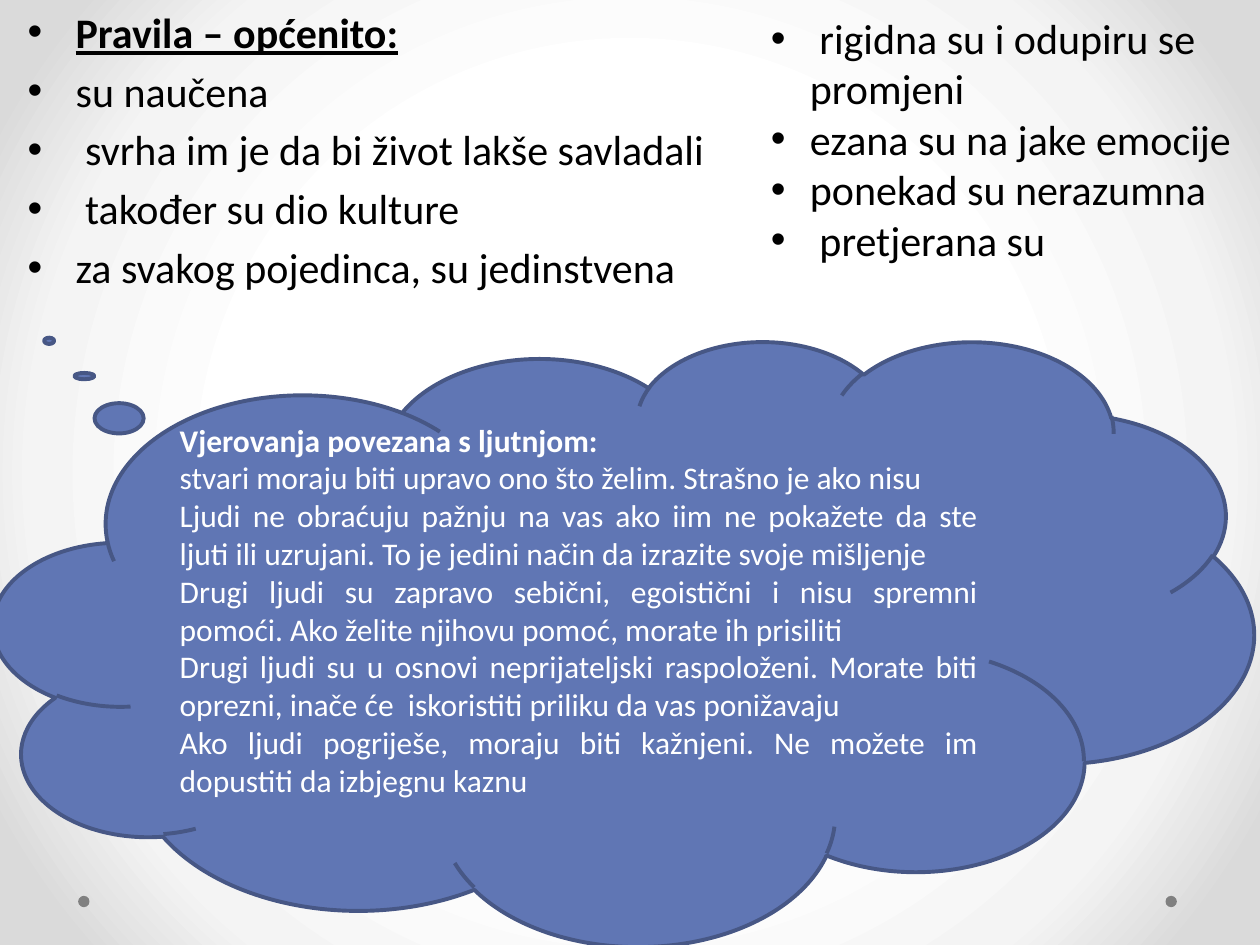
from lxml import etree
from pptx import Presentation
from pptx.dml import color as c
from pptx.enum import shapes, text
from pptx.oxml import ns
from pptx.util import Inches, Pt

THEME = {
    "font": "Calibri",
    "list_size": 24,
    "cloud_size": 18,
    "dark": "000000",
    "light": "FFFFFF",
    "cloud": "6076B4",
    "outline": "475785",
    "dot": "808080",
    "background": [(0, "FFFFFF"), (50, "FFFFFF"), (76, "F4F4F4"), (92, "DADADA"), (100, "DADADA")],
}


def add_shape(kind, box, fill, line=None):
    sp = s.shapes.add_shape(kind, *map(Inches, box))
    sp.shadow.inherit = False
    sp.fill.solid()
    sp.fill.fore_color.rgb = c.RGBColor.from_string(fill)
    if line:
        sp.line.color.rgb = c.RGBColor.from_string(line)
        sp.line.width = Pt(2.25)
    else:
        sp.line.fill.background()
    return sp


def write_lines(tf, lines, size, color, align, indent=0, heading=None, space=None):
    for i, line in enumerate(lines):
        p = tf.paragraphs[0] if i == 0 else tf.add_paragraph()
        p.alignment = align
        if space is not None:
            p.space_before = Pt(space)
        if indent:
            pPr = p._p.get_or_add_pPr()
            pPr.set("marL", str(Inches(indent)))
            pPr.set("indent", str(-Inches(indent)))
            etree.SubElement(pPr, ns.qn("a:buFont")).set("typeface", "Arial")
            etree.SubElement(pPr, ns.qn("a:buChar")).set("char", "•")
        r = p.add_run()
        r.text = line
        formats = {"name": THEME["font"], "size": Pt(size), "bold": False}
        if i == 0 and heading:
            formats.update(heading)
        for name, value in formats.items():
            setattr(r.font, name, value)
        r.font.color.rgb = c.RGBColor.from_string(color)


prs = Presentation()
prs.slide_width, prs.slide_height = Inches(10), Inches(7.5)
s = prs.slides.add_slide(prs.slide_layouts[1])
title = s.shapes.title._element
title.getparent().remove(title)

cSld = s._element.find(ns.qn("p:cSld"))
bg = etree.Element(ns.qn("p:bg"))
cSld.insert(0, bg)
bgPr = etree.SubElement(bg, ns.qn("p:bgPr"))
grad = etree.SubElement(bgPr, ns.qn("a:gradFill"), rotWithShape="1")
stops = etree.SubElement(grad, ns.qn("a:gsLst"))
for pos, rgb in THEME["background"]:
    stop = etree.SubElement(stops, ns.qn("a:gs"), pos=str(pos * 1000))
    etree.SubElement(stop, ns.qn("a:srgbClr"), val=rgb)
circle = etree.SubElement(grad, ns.qn("a:path"))
circle.set("path", "circle")
etree.SubElement(circle, ns.qn("a:fillToRect"), l="50000", t="50000", r="50000", b="50000")
etree.SubElement(bgPr, ns.qn("a:effectLst"))

for left in (9.25, 0.62):
    add_shape(shapes.MSO_SHAPE.OVAL, (left, 7.11, 0.09, 0.09), THEME["dot"])

rules = s.placeholders[1]
box = {"left": 0.12, "top": 0, "width": 5.76, "height": 2.81}
for name, value in box.items():
    setattr(rules, name, Inches(value))
rules.text_frame.auto_size = text.MSO_AUTO_SIZE.NONE
write_lines(rules.text_frame, [
    "Pravila – općenito:",
    "su naučena",
    " svrha im je da bi život lakše savladali",
    " također su dio kulture",
    "za svakog pojedinca, su jedinstvena",
], THEME["list_size"], THEME["dark"], text.PP_ALIGN.LEFT, 0.38, {"bold": True, "underline": True})

cloud = add_shape(shapes.MSO_SHAPE.CLOUD, (-0.05, 2.7, 10, 4.8), THEME["cloud"], THEME["outline"])
tf = cloud.text_frame
tf.word_wrap = True
tf.vertical_anchor = text.MSO_ANCHOR.MIDDLE
tf.margin_bottom = Inches(0.35)
write_lines(tf, [
    "Vjerovanja povezana s ljutnjom:",
    "stvari moraju biti upravo ono što želim. Strašno je ako nisu",
    "Ljudi ne obraćuju pažnju na vas ako iim ne pokažete da ste ljuti ili uzrujani. To je jedini način da izrazite svoje mišljenje",
    "Drugi ljudi su zapravo sebični, egoistični i nisu spremni pomoći. Ako želite njihovu pomoć, morate ih prisiliti",
    "Drugi ljudi su u osnovi neprijateljski raspoloženi. Morate biti oprezni, inače će  iskoristiti priliku da vas ponižavaju",
    "Ako ljudi pogriješe, moraju biti kažnjeni. Ne možete im dopustiti da izbjegnu kaznu",
], THEME["cloud_size"], THEME["light"], text.PP_ALIGN.JUSTIFY, heading={"bold": True})

traits = s.shapes.add_textbox(*map(Inches, (6.02, 0.05, 3.98, 2.12)))
tf = traits.text_frame
tf.word_wrap = True
tf.auto_size = text.MSO_AUTO_SIZE.SHAPE_TO_FIT_TEXT
write_lines(tf, [
    " rigidna su i odupiru se promjeni",
    "ezana su na jake emocije",
    "ponekad su nerazumna",
    " pretjerana su",
], THEME["list_size"], THEME["dark"], text.PP_ALIGN.LEFT, 0.31, space=0)

for bubble in ((0.75, 3.2, 0.39, 0.24), (0.59, 2.96, 0.16, 0.05), (0.35, 2.68, 0.08, 0.05)):
    add_shape(shapes.MSO_SHAPE.OVAL, bubble, THEME["cloud"], THEME["outline"])

prs.save("out.pptx")
